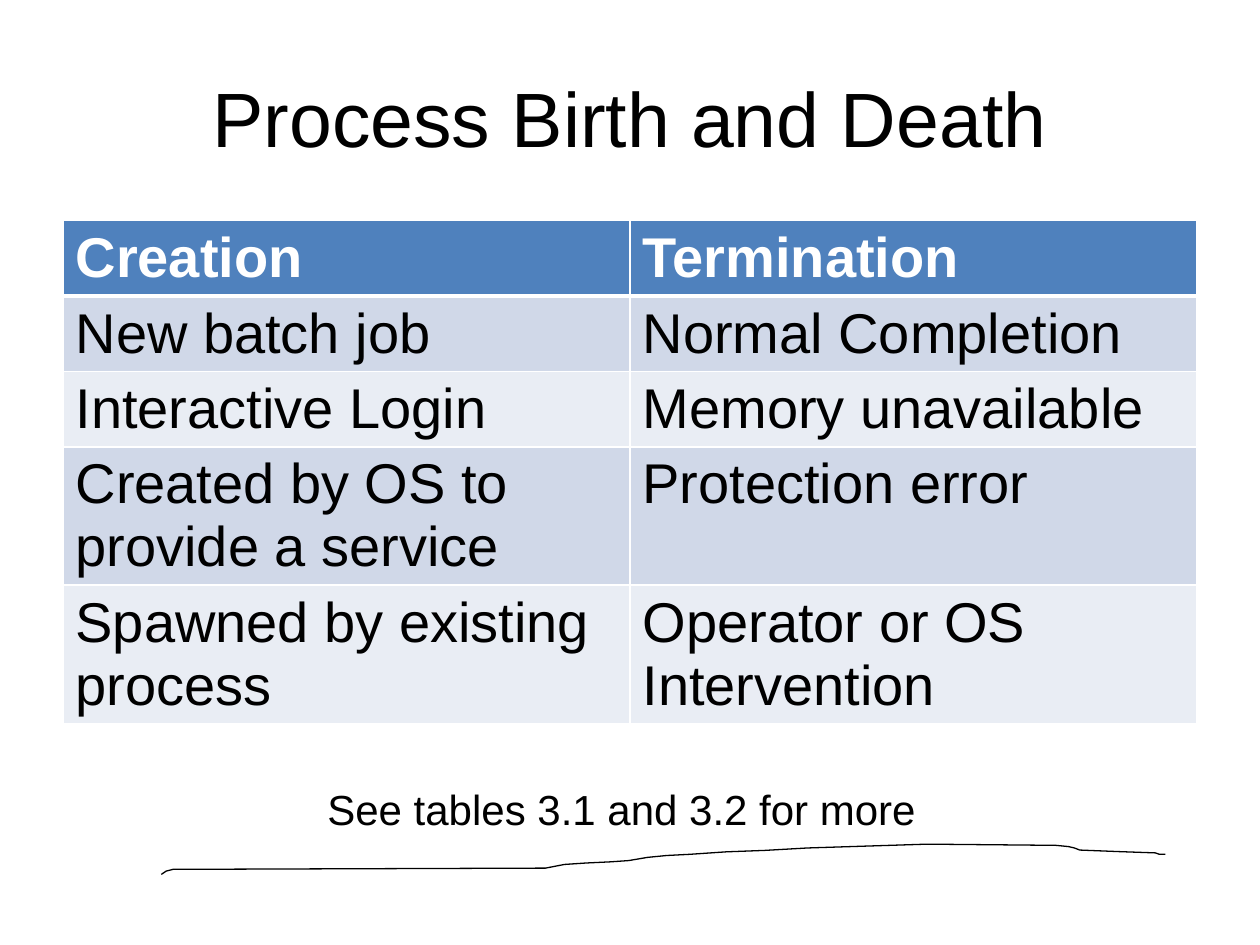
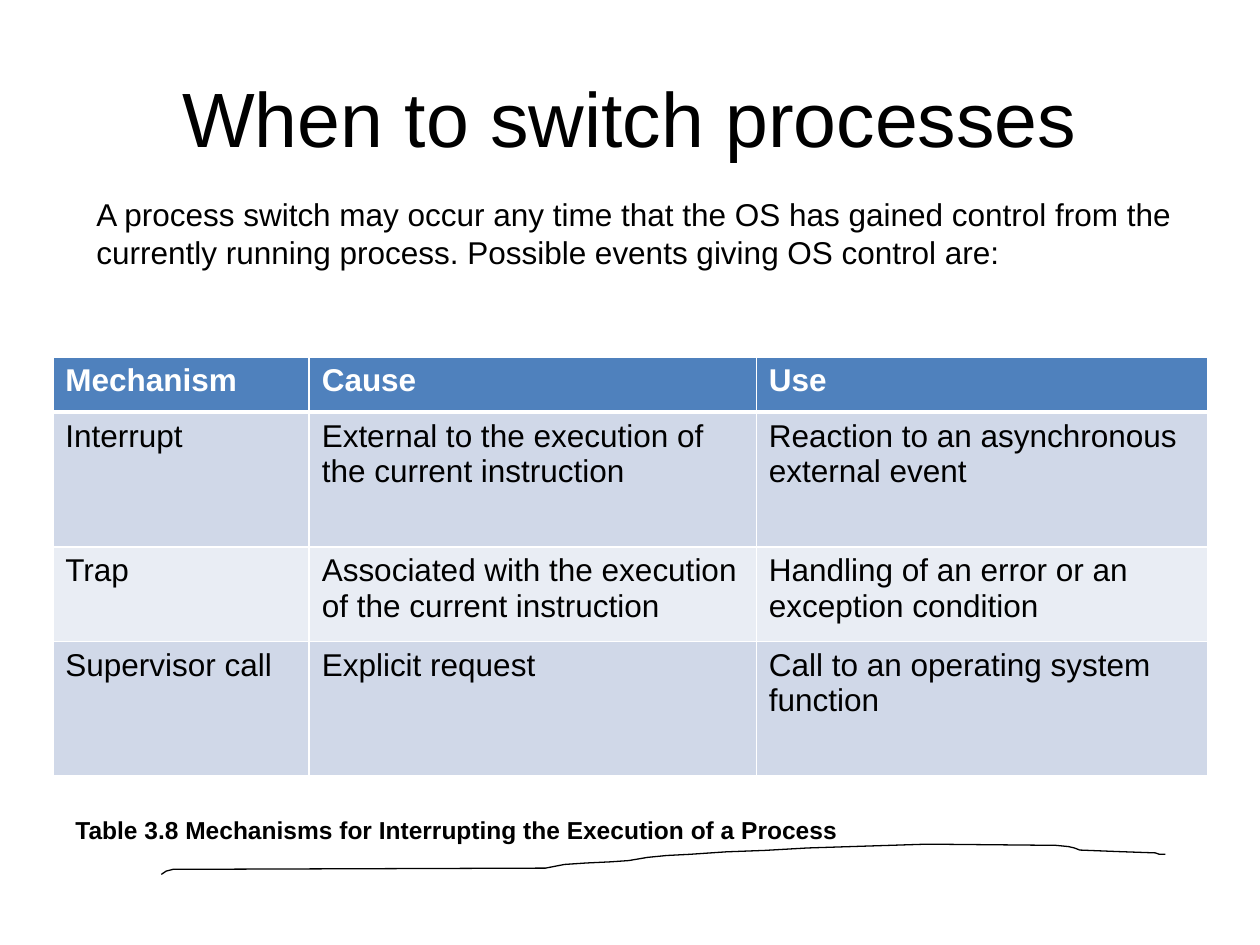
from dataclasses import dataclass

from lxml import etree
from pptx import Presentation
from pptx.dml.color import RGBColor
from pptx.enum.text import MSO_ANCHOR, MSO_AUTO_SIZE, PP_ALIGN
from pptx.oxml.ns import qn
from pptx.presentation import Presentation as PresentationType
from pptx.slide import Slide
from pptx.table import _Cell as Cell
from pptx.text.text import TextFrame
from pptx.util import Pt

FONT = "Arial"
BLACK, WHITE = "000000", "FFFFFF"
HEADER_FILL = "4F81BD"
BAND_FILLS = ("D0D8E8", "E9EDF4")
THIN_BORDER, HEADER_BORDER = 1, 3
TITLE_BOX = (36, 21.6, 648, 90)
UNDERLINE_POINTS = [
    (92.2, 499.7), (95, 497.8), (99, 496.8), (107.3, 496.8), (311.8, 496.1),
    (322.6, 494), (335, 493.2), (349.2, 492.5), (359.3, 491.8), (370, 490),
    (380.9, 488.9), (394.6, 488.2), (415, 486.8), (437, 486), (461.5, 484.6),
    (529.9, 482.4), (603.4, 483.1), (610.6, 483.8), (614, 484.6), (617, 485.8),
    (640, 486.7), (660.2, 487.4), (662.5, 488.2), (666, 488.2),
]


@dataclass
class TableContent:
    left: float
    top: float
    column_widths: list[float]
    row_heights: list[float]
    size: float
    rows: list[list[str]]


@dataclass
class Note:
    text: str
    left: float
    top: float
    width: float
    height: float
    size: float
    bold: bool = False


@dataclass
class SlideContent:
    title: str
    table: TableContent
    notes: list[Note]


SLIDES = [
    SlideContent(
        "Process Birth and Death",
        TableContent(36, 126, [324, 324], [43, 43, 43, 79, 79], 32, [
            ["Creation", "Termination"],
            ["New batch job", "Normal Completion"],
            ["Interactive Login", "Memory unavailable"],
            ["Created by OS to provide a service", "Protection error"],
            ["Spawned by existing process", "Operator or OS Intervention"],
        ]),
        [Note("See tables 3.1 and 3.2 for more", 180, 444.3, 359.3, 36, 24)],
    ),
    SlideContent(
        "When to switch processes",
        TableContent(30.2, 204, [146.5, 255.5, 258], [31.5, 77, 54, 77], 18, [
            ["Mechanism", "Cause", "Use"],
            ["Interrupt", "External to the execution of the current instruction",
             "Reaction to an asynchronous\nexternal event"],
            ["Trap", "Associated with the execution of the current instruction",
             "Handling of an error or an\nexception condition"],
            ["Supervisor call", "Explicit request",
             "Call to an operating system\nfunction"],
        ]),
        [
            Note("Table 3.8 Mechanisms for Interrupting the Execution of a Process",
                 36, 462.2, 612, 24.5, 14, True),
            Note("A process switch may occur any time that the OS has gained control "
                 "from the currently running process. Possible events giving OS "
                 "control are:", 48, 108, 636, 51, 18),
        ],
    ),
]


def color(value: str) -> RGBColor:
    return RGBColor.from_string(value)


def write_text(frame: TextFrame, text: str, size: float, font_color: str = BLACK,
               bold: bool = False, alignment: PP_ALIGN = PP_ALIGN.LEFT) -> None:
    frame.text = text
    for paragraph in frame.paragraphs:
        paragraph.alignment = alignment
        paragraph.font.name = FONT
        paragraph.font.size = Pt(size)
        paragraph.font.bold = bold
        paragraph.font.color.rgb = color(font_color)


def add_underline(slide: Slide) -> None:
    points = [(Pt(x), Pt(y)) for x, y in UNDERLINE_POINTS]
    builder = slide.shapes.build_freeform(*points[0])
    builder.add_line_segments(points[1:], close=False)
    shape = builder.convert_to_shape()
    shape.shadow.inherit = False
    shape.fill.background()
    shape.line.color.rgb = color(BLACK)
    shape.line.width = Pt(0.75)


def set_title(slide: Slide, text: str) -> None:
    title = slide.shapes.title
    title.left, title.top, title.width, title.height = map(Pt, TITLE_BOX)
    title.text_frame.vertical_anchor = MSO_ANCHOR.MIDDLE
    title.text_frame.auto_size = MSO_AUTO_SIZE.NONE
    write_text(title.text_frame, text, 44, alignment=PP_ALIGN.CENTER)


def set_borders(cell: Cell, top: float, bottom: float) -> None:
    properties = cell._tc.get_or_add_tcPr()
    sides = {"L": THIN_BORDER, "R": THIN_BORDER, "T": top, "B": bottom}
    for side, width in sides.items():
        line = etree.SubElement(properties, qn(f"a:ln{side}"), w=str(Pt(width)))
        fill = etree.SubElement(line, qn("a:solidFill"))
        etree.SubElement(fill, qn("a:srgbClr"), val=WHITE)


def add_table(slide: Slide, content: TableContent) -> None:
    frame = slide.shapes.add_table(
        len(content.rows), len(content.column_widths), Pt(content.left), Pt(content.top),
        Pt(sum(content.column_widths)), Pt(sum(content.row_heights)))
    table = frame.table
    table.horz_banding = False
    for column, width in zip(table.columns, content.column_widths):
        column.width = Pt(width)
    for row, height in zip(table.rows, content.row_heights):
        row.height = Pt(height)
    for row_index, texts in enumerate(content.rows):
        is_header = row_index == 0
        top = HEADER_BORDER if row_index == 1 else THIN_BORDER
        bottom = HEADER_BORDER if is_header else THIN_BORDER
        fill = HEADER_FILL if is_header else BAND_FILLS[(row_index - 1) % 2]
        for column_index, text in enumerate(texts):
            cell = table.cell(row_index, column_index)
            set_borders(cell, top, bottom)
            cell.fill.solid()
            cell.fill.fore_color.rgb = color(fill)
            write_text(cell.text_frame, text, content.size,
                       WHITE if is_header else BLACK, is_header)


def add_note(slide: Slide, note: Note) -> None:
    box = slide.shapes.add_textbox(
        Pt(note.left), Pt(note.top), Pt(note.width), Pt(note.height))
    box.text_frame.word_wrap = True
    box.text_frame.auto_size = MSO_AUTO_SIZE.SHAPE_TO_FIT_TEXT
    write_text(box.text_frame, note.text, note.size, bold=note.bold)


def add_slide(presentation: PresentationType, content: SlideContent) -> None:
    slide = presentation.slides.add_slide(presentation.slide_layouts.get_by_name("Title Only"))
    add_underline(slide)
    set_title(slide, content.title)
    add_table(slide, content.table)
    for note in content.notes:
        add_note(slide, note)


def main() -> None:
    presentation = Presentation()
    presentation.slide_width, presentation.slide_height = Pt(720), Pt(540)
    for content in SLIDES:
        add_slide(presentation, content)
    presentation.save("out.pptx")


if __name__ == "__main__":
    main()
